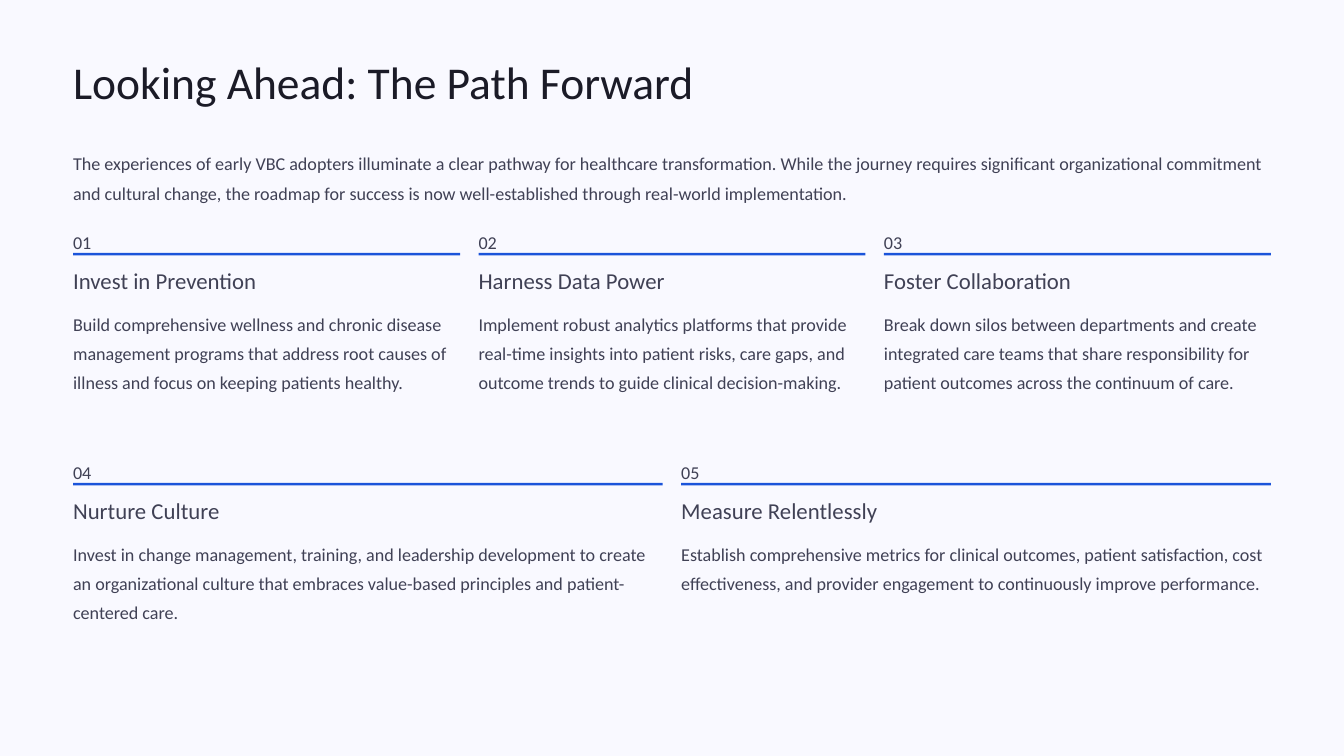
from pptx import Presentation
from pptx.dml.color import RGBColor
from pptx.enum.shapes import MSO_SHAPE
from pptx.util import Pt

EMU_PER_PX = 9144
COLORS = {"background": "F9F9FF", "title": "1B1B27", "body": "404155", "rule": "1B54DA"}
FONT = "Calibri"
LEFT, CONTENT_WIDTH, GAP = 87, 1426, 22


def px(*lengths):
    return [round(length * EMU_PER_PX) for length in lengths]


def add_text(text, left, top, width, height, size=15.5, spacing=25, color="body", wrap=True):
    text_box = slide.shapes.add_textbox(*px(left, top, width, height))
    frame = text_box.text_frame
    frame.margin_left = frame.margin_top = frame.margin_right = frame.margin_bottom = 0
    frame.word_wrap = wrap
    paragraph = frame.paragraphs[0]
    paragraph.line_spacing = Pt(spacing)
    run = paragraph.add_run()
    run.text = text
    run.font.name = FONT
    run.font.size = Pt(size)
    run.font.color.rgb = RGBColor.from_string(COLORS[color])


presentation = Presentation()
presentation.slide_width, presentation.slide_height = px(1600, 900)
slide = presentation.slides.add_slide(presentation.slide_layouts[6])
slide.background.fill.solid()
slide.background.fill.fore_color.rgb = RGBColor.from_string(COLORS["background"])

add_text("Looking Ahead: The Path Forward", LEFT, 62, 912, 68,
         size=39, spacing=48.5, color="title", wrap=False)
add_text("The experiences of early VBC adopters illuminate a clear pathway for healthcare "
         "transformation. While the journey requires significant organizational commitment "
         "and cultural change, the roadmap for success is now well-established through "
         "real-world implementation.", LEFT, 173, CONTENT_WIDTH, 69)

step_rows = [
    (267, 139, [
        ("Invest in Prevention",
         "Build comprehensive wellness and chronic disease management programs that address "
         "root causes of illness and focus on keeping patients healthy."),
        ("Harness Data Power",
         "Implement robust analytics platforms that provide real-time insights into patient "
         "risks, care gaps, and outcome trends to guide clinical decision-making."),
        ("Foster Collaboration",
         "Break down silos between departments and create integrated care teams that share "
         "responsibility for patient outcomes across the continuum of care."),
    ]),
    (541, 104, [
        ("Nurture Culture",
         "Invest in change management, training, and leadership development to create an "
         "organizational culture that embraces value-based principles and patient-centered care."),
        ("Measure Relentlessly",
         "Establish comprehensive metrics for clinical outcomes, patient satisfaction, cost "
         "effectiveness, and provider engagement to continuously improve performance."),
    ]),
]

number = 0
for top, body_height, steps in step_rows:
    width = (CONTENT_WIDTH - GAP * (len(steps) - 1)) / len(steps)
    for column, (heading, description) in enumerate(steps):
        number += 1
        left = LEFT + column * (width + GAP)
        add_text(f"{number:02d}", left, top, 22, 27, wrap=False)
        rule = slide.shapes.add_shape(MSO_SHAPE.RECTANGLE, *px(left, top + 34, width, 3))
        rule.shadow.inherit = False
        rule.fill.solid()
        rule.fill.fore_color.rgb = RGBColor.from_string(COLORS["rule"])
        rule.line.fill.background()
        add_text(heading, left, top + 50, 271, 34, size=19.5, spacing=24, wrap=False)
        add_text(description, left, top + 97, width, body_height)

presentation.save("out.pptx")
